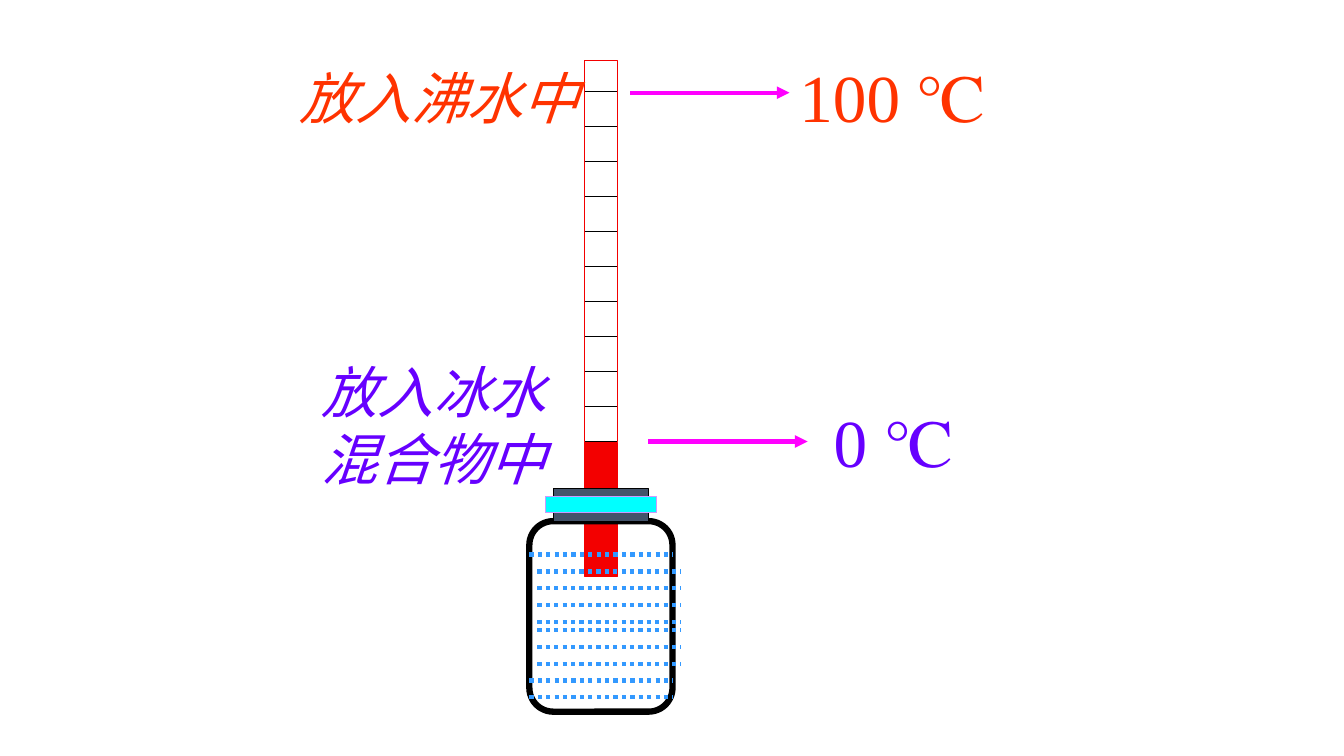
import pptx
import pptx.util
import pptx.dml.color
import pptx.enum.dml
import pptx.enum.shapes
import pptx.enum.text
import pptx.oxml.ns
import lxml.etree

Inches = pptx.util.Inches
SHAPES = pptx.enum.shapes.MSO_SHAPE

THEME = {
    "white": "FFFFFF", "black": "000000", "mercury": "F30000",
    "stopper": "44546A", "band": "00FFFF", "band_edge": "CC99FF",
    "water": "3399FF", "arrow": "FF00FF", "hot": "FF3300", "cold": "6600FF",
    "latin": "Times New Roman", "chinese": "Arial",
    "reading_size": 48, "label_size": 40,
    "thin": 0.75, "tick": 1, "thick": 3, "glass": 4.5,
}

# Content: text, box (left, top, width, height), colour
READINGS = [
    ("0 ℃", (8.17, 3.92, 1.73, 0.91), "cold"),
    ("100 ℃", (7.83, 0.5, 2.6, 0.91), "hot"),
]
LABELS = [
    ("放入冰水混合物中", (2.67, 3.5, 2.84, 1.45), "cold"),
    ("放入沸水中", (2.37, 0.58, 3.47, 0.77), "hot"),
]
# Preset, box, fill, line colour, line width
THERMOMETER = [
    (SHAPES.RECTANGLE, (5.8, 4.39, 0.32, 1.33), "mercury", "mercury", "thin"),
    (SHAPES.RECTANGLE, (5.8, 0.6, 0.32, 0.31), "white", "mercury", "thin"),
    (SHAPES.ROUNDED_RECTANGLE, (5.25, 5.17, 1.42, 1.89), None, "black", "glass"),
    (SHAPES.RECTANGLE, (5.49, 4.85, 0.94, 0.32), "stopper", "black", "thin"),
    (SHAPES.RECTANGLE, (5.41, 4.93, 1.1, 0.16), "band", "band_edge", "thin"),
    (SHAPES.RECTANGLE, (5.8, 0.91, 0.32, 3.47), "white", "mercury", "thin"),
]
ARROWS = [(6.43, 4.38), (6.25, 0.92)]
ARROW_LENGTH = 1.58
TUBE_LEFT, TUBE_WIDTH = 5.8, 0.32
TICK_TOP, TICK_BOTTOM, TICK_STEPS = 0.91, 4.38, 10
WATER_WIDTH = 1.42
# Left end, first height, number of rows in each run of water lines
WATER_RUNS = [(5.25, 5.5, 1), (5.33, 5.67, 4), (5.33, 6.25, 1),
              (5.33, 6.42, 2), (5.25, 6.75, 2)]
WATER_STEP = 1 / 6

deck = pptx.Presentation()
deck.slide_width, deck.slide_height = Inches(13.33), Inches(7.5)
page = deck.slides.add_slide(deck.slide_layouts[6])


def color(name):
    return pptx.dml.color.RGBColor.from_string(THEME[name])


def add_part(preset, box, fill, edge, width):
    part = page.shapes.add_shape(preset, *map(Inches, box))
    part.shadow.inherit = False
    if fill:
        part.fill.solid()
        part.fill.fore_color.rgb = color(fill)
    else:
        part.fill.background()
    part.line.color.rgb = color(edge)
    part.line.width = pptx.util.Pt(THEME[width])


def add_line(left, top, length, ink, width):
    line = page.shapes.add_connector(
        pptx.enum.shapes.MSO_CONNECTOR.STRAIGHT,
        Inches(left), Inches(top), Inches(left + length), Inches(top))
    line.line.color.rgb = color(ink)
    line.line.width = pptx.util.Pt(THEME[width])
    properties = line._element.spPr
    lxml.etree.SubElement(properties, pptx.oxml.ns.qn("a:effectLst"))
    return line


def add_text(text, box, ink, font, size, label=False):
    frame = page.shapes.add_textbox(*map(Inches, box)).text_frame
    frame.word_wrap = True
    frame.text = text
    para = frame.paragraphs[0]
    span = para.runs[0]
    span.font.name = THEME[font]
    span.font.size = pptx.util.Pt(THEME[size])
    span.font.color.rgb = color(ink)
    if label:
        para.alignment = pptx.enum.text.PP_ALIGN.RIGHT
        span.font.italic = True


# Tube, bottle and stopper
for part in THERMOMETER:
    add_part(*part)

# Scale marks
tick_gap = (TICK_BOTTOM - TICK_TOP) / TICK_STEPS
for step in range(TICK_STEPS + 1):
    add_line(TUBE_LEFT, TICK_TOP + step * tick_gap, TUBE_WIDTH, "black", "tick")

# Arrows to the readings
for left, top in ARROWS:
    arrow = add_line(left, top, ARROW_LENGTH, "arrow", "thick")
    lxml.etree.SubElement(arrow.line._get_or_add_ln(),
                          pptx.oxml.ns.qn("a:tailEnd"), type="triangle")

# Readings and labels
for reading in READINGS:
    add_text(*reading, "latin", "reading_size")
for label in LABELS:
    add_text(*label, "chinese", "label_size", label=True)

# Water in the bottle
for left, top, rows in WATER_RUNS:
    for row in range(rows):
        wave = add_line(left, top + row * WATER_STEP, WATER_WIDTH, "water", "thick")
        wave.line.dash_style = pptx.enum.dml.MSO_LINE.ROUND_DOT

deck.save("out.pptx")
